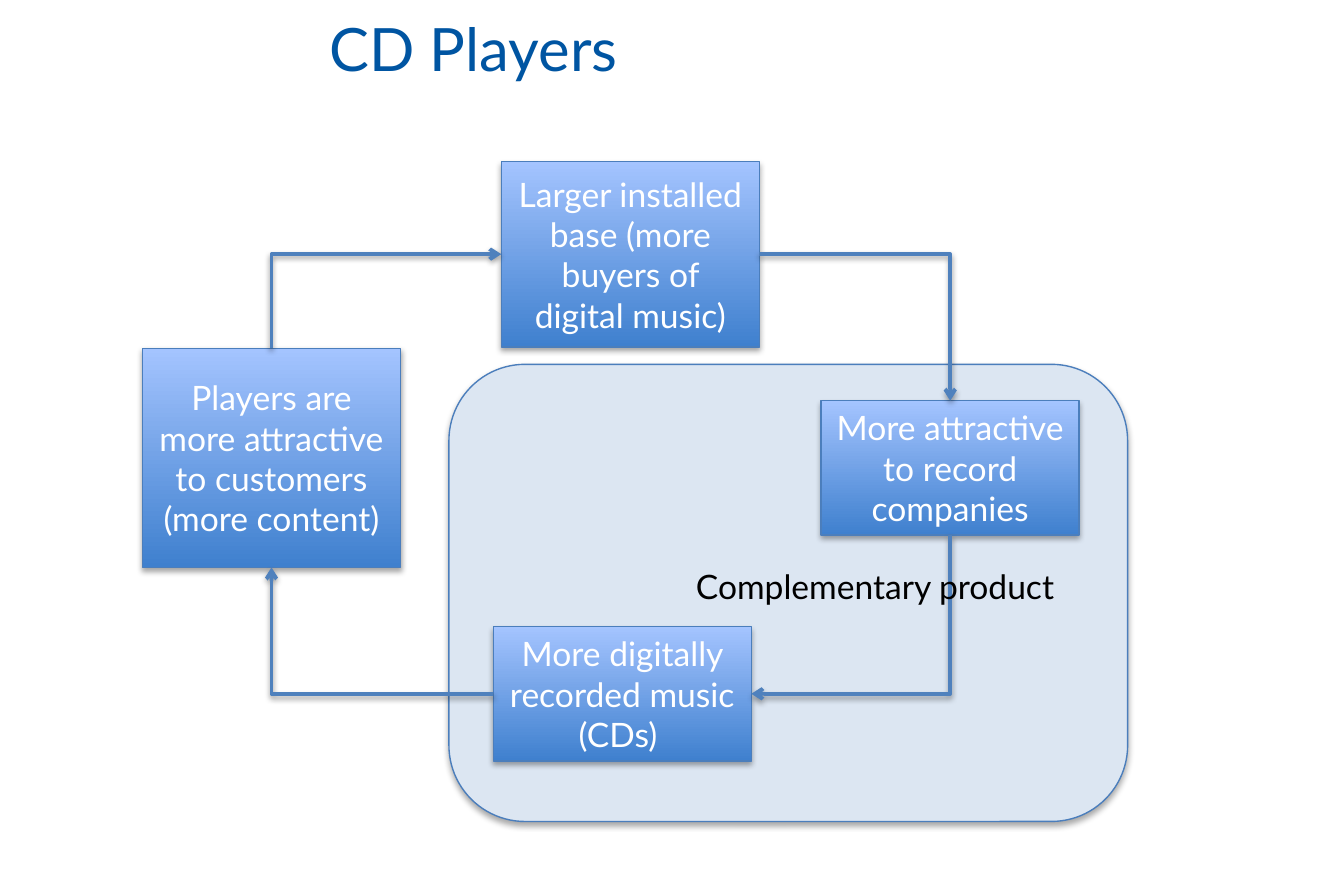
import pptx
import pptx.dml.color
import pptx.enum.shapes
import pptx.enum.text
import pptx.oxml
import pptx.oxml.ns
import pptx.util

PX = 9144  # EMU per px, 100 px to the inch
FONT = "Lato"
SHAPES = pptx.enum.shapes.MSO_SHAPE
ALIGN = pptx.enum.text.PP_ALIGN
MIDDLE = pptx.enum.text.MSO_ANCHOR.MIDDLE


def rgb(value):
    return pptx.dml.color.RGBColor.from_string(value)


def add_shadow(element, distance, opacity):
    element.spPr.append(pptx.oxml.parse_xml(
        f'<a:effectLst {pptx.oxml.ns.nsdecls("a")}>'
        f'<a:outerShdw blurRad="40000" dist="{distance}" dir="5400000" rotWithShape="0">'
        f'<a:srgbClr val="000000"><a:alpha val="{opacity}"/></a:srgbClr>'
        '</a:outerShdw></a:effectLst>'))


prs = pptx.Presentation()
prs.slide_width, prs.slide_height = 1000 * PX, 650 * PX
slide = prs.slides.add_slide(prs.slide_layouts[5])

# Title
title = slide.shapes.title
title.left, title.top, title.width, title.height = [v * PX for v in (235, 7, 715, 57)]
title.text_frame.vertical_anchor = MIDDLE
heading = title.text_frame.paragraphs[0]
heading.alignment = ALIGN.LEFT
run = heading.add_run()
run.text = "CD Players"
run.font.name, run.font.size = FONT, pptx.util.Pt(32)
run.font.color.rgb = rgb("0055A2")

# Complementary product region
region = slide.shapes.add_shape(
    SHAPES.ROUNDED_RECTANGLE, *[v * PX for v in (334, 271, 505, 340)])
region.fill.solid()
region.fill.fore_color.rgb = rgb("DCE6F2")
region.line.color.rgb = rgb("4B7EBC")
region.line.width = pptx.util.Pt(0.75)
add_shadow(region._element, 23000, 35000)

# Steps of the loop: left, top, height, paragraphs
steps = {
    "base": (373, 120, 138, ["Larger installed base (more buyers of digital music)"]),
    "labels": (611, 298, 100, ["More attractive to record companies"]),
    "players": (106, 259, 163, ["Players are more attractive to customers", "(more content)"]),
    "music": (367, 466, 100, ["More digitally recorded music", "(CDs) "]),
}
boxes = {}
for step, (left, top, height, lines) in steps.items():
    box = slide.shapes.add_shape(
        SHAPES.RECTANGLE, left * PX, top * PX, 192 * PX, height * PX)
    box.fill.gradient()
    box.fill.gradient_angle = 90
    for stop, position, color in zip(box.fill.gradient_stops, (0, 1), ("3F80CE", "A4C4FF")):
        stop.position = position
        stop.color.rgb = rgb(color)
    box.line.color.rgb = rgb("4B7EBC")
    box.line.width = pptx.util.Pt(0.75)
    add_shadow(box._element, 23000, 35000)
    frame = box.text_frame
    frame.word_wrap = True
    frame.vertical_anchor = MIDDLE
    for i, line in enumerate(lines):
        paragraph = frame.add_paragraph() if i else frame.paragraphs[0]
        paragraph.alignment = ALIGN.CENTER
        run = paragraph.add_run()
        run.text = line
        run.font.name, run.font.size = FONT, pptx.util.Pt(18)
        run.font.color.rgb = rgb("FFFFFF")
    boxes[step] = box

# One-bend arrows: from step and side, to step and side, rotation
arrows = [
    ("base", 3, "labels", 0, 0),
    ("players", 0, "base", 1, 270),
    ("labels", 2, "music", 3, 90),
    ("music", 1, "players", 2, 180),
]
for start, start_side, end, end_side, rotation in arrows:
    arrow = slide.shapes.add_connector(
        pptx.enum.shapes.MSO_CONNECTOR.ELBOW, 0, 0, PX, PX)
    arrow.begin_connect(boxes[start], start_side)
    arrow.end_connect(boxes[end], end_side)
    properties = arrow._element.spPr
    properties.prstGeom.set("prst", "bentConnector2")

    # Turn the bend about the centre of the span
    xfrm = properties.xfrm
    xfrm.flipH = xfrm.flipV = False
    xfrm.rot = rotation
    if rotation in (90, 270):
        width, height = arrow.width, arrow.height
        arrow.left += (width - height) // 2
        arrow.top += (height - width) // 2
        arrow.width, arrow.height = height, width

    arrow.line.color.rgb = rgb("4F81BD")
    arrow.line.width = pptx.util.Pt(2)
    arrow.line._get_or_add_ln().append(pptx.oxml.parse_xml(
        f'<a:tailEnd {pptx.oxml.ns.nsdecls("a")} type="arrow"/>'))
    add_shadow(arrow._element, 20000, 38000)

# Region label
label = slide.shapes.add_textbox(*[v * PX for v in (508, 416, 331, 40)])
label.text_frame.word_wrap = False
label.text_frame.auto_size = pptx.enum.text.MSO_AUTO_SIZE.SHAPE_TO_FIT_TEXT
run = label.text_frame.paragraphs[0].add_run()
run.text = "Complementary product"
run.font.name, run.font.size = FONT, pptx.util.Pt(18)
run.font.color.rgb = rgb("000000")

prs.save("out.pptx")
